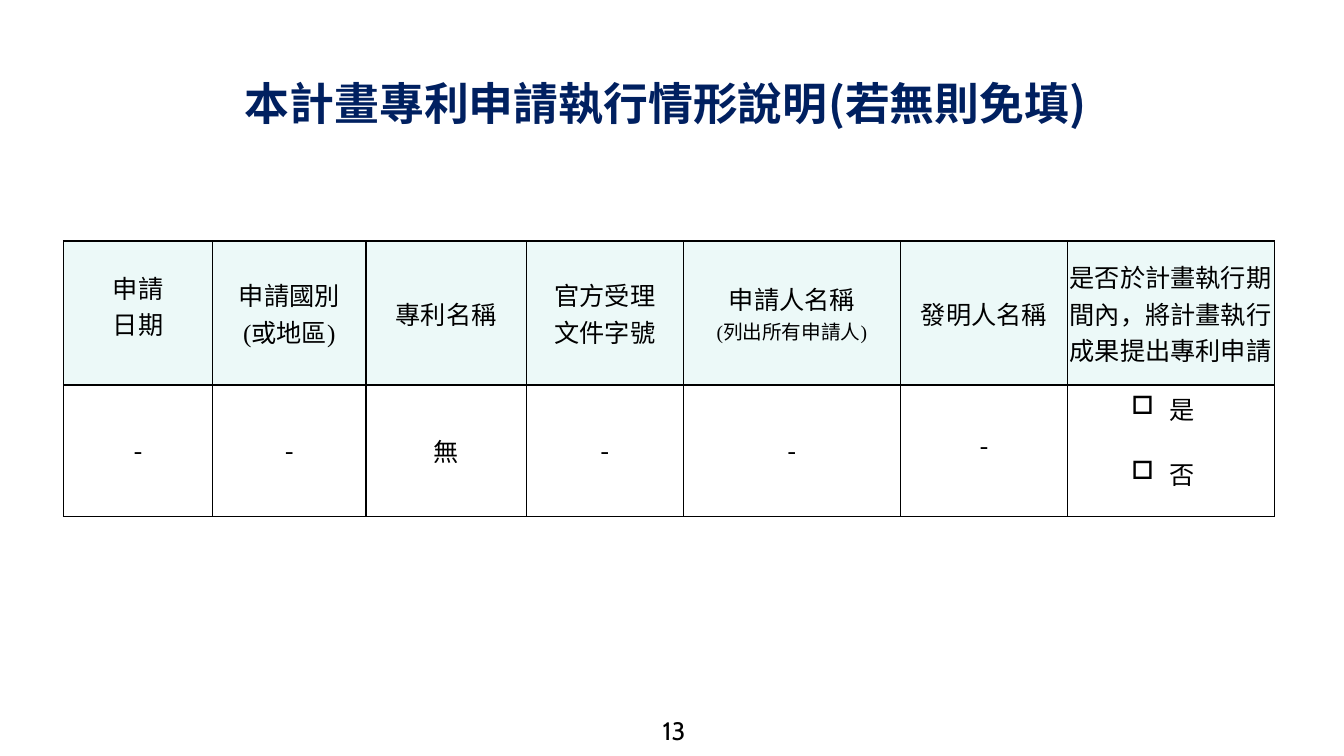
from lxml import etree
from pptx import Presentation
from pptx.dml.color import RGBColor
from pptx.enum.text import MSO_ANCHOR as Anchor, PP_ALIGN as Align
from pptx.oxml.ns import qn
from pptx.util import Inches, Pt

BLACK = RGBColor(0x00, 0x00, 0x00)
NAVY = RGBColor(0x00, 0x20, 0x60)
MINT = RGBColor(0xEC, 0xF9, 0xF8)

HEADERS = [
    ["申請", "日期"],
    ["申請國別", "(或地區)"],
    ["專利名稱"],
    ["官方受理", "文件字號"],
    ["申請人名稱", "(列出所有申請人)"],
    ["發明人名稱"],
    ["是否於計畫執行期間內，將計畫執行成果提出專利申請"],
]
ENTRIES = [["-"], ["-"], ["無"], ["-"], ["-"], ["-"], ["是", "否"]]
COLUMN_WIDTHS = [1.48, 1.52, 1.59, 1.56, 2.15, 1.66, 2.05]
ROW_HEIGHTS = [1.43, 1.3]


def style_font(paragraph, name, size, color, bold=False):
    font = paragraph.font
    font.name, font.size, font.bold = name, Pt(size), bold
    font.color.rgb = color


def add_borders(cell):
    properties = cell._tc.get_or_add_tcPr()
    for position, side in enumerate(["lnL", "lnR", "lnT", "lnB"]):
        line = etree.Element(qn(f"a:{side}"), w=str(Pt(1)))
        fill = etree.SubElement(line, qn("a:solidFill"))
        etree.SubElement(fill, qn("a:srgbClr"), val=str(BLACK))
        properties.insert(position, line)


presentation = Presentation()
presentation.slide_width = Inches(13.33)
presentation.slide_height = Inches(7.5)
slide = presentation.slides.add_slide(presentation.slide_layouts[6])

page_number = slide.shapes.add_textbox(Inches(6.45), Inches(7.05), Inches(0.47), Inches(0.4))
paragraph = page_number.text_frame.paragraphs[0]
paragraph.text = "13"
paragraph.alignment = Align.CENTER
style_font(paragraph, "Cabin", 18, BLACK)

title = slide.shapes.add_textbox(Inches(2.33), Inches(0.7), Inches(8.6), Inches(0.64))
title.text_frame.word_wrap = True
paragraph = title.text_frame.paragraphs[0]
paragraph.text = "本計畫專利申請執行情形說明(若無則免填)"
style_font(paragraph, "Noto Sans CJK SC", 32, NAVY, bold=True)

table = slide.shapes.add_table(
    2, 7, Inches(0.63), Inches(2.39), Inches(sum(COLUMN_WIDTHS)), Inches(sum(ROW_HEIGHTS))
).table
for column, width in zip(table.columns, COLUMN_WIDTHS):
    column.width = Inches(width)
for row, height in zip(table.rows, ROW_HEIGHTS):
    row.height = Inches(height)

for row_index, contents in enumerate([HEADERS, ENTRIES]):
    is_header = row_index == 0
    for column_index, lines in enumerate(contents):
        cell = table.cell(row_index, column_index)
        cell.margin_left = cell.margin_right = Inches(0.02)
        cell.margin_top = cell.margin_bottom = 0
        cell.vertical_anchor = Anchor.MIDDLE
        if is_header:
            cell.fill.solid()
            cell.fill.fore_color.rgb = MINT
        else:
            cell.fill.background()
        add_borders(cell)
        cell.text = "\n".join(lines)
        for paragraph in cell.text_frame.paragraphs:
            paragraph.alignment = Align.CENTER
            if not is_header and column_index == 6:
                properties = paragraph._p.get_or_add_pPr()
                properties.set("marL", "0")
                properties.set("indent", str(Inches(-0.38)))
                etree.SubElement(properties, qn("a:buChar"), char="□")
                tabs = etree.SubElement(properties, qn("a:tabLst"))
                etree.SubElement(tabs, qn("a:tab"), pos=str(Inches(0.25)), algn="l")
            size = 14 if paragraph.text == "(列出所有申請人)" else 18
            style_font(paragraph, "Times New Roman", size, BLACK)

date_header = table.cell(0, 0)
date_header.vertical_anchor = Anchor.TOP
date_header.margin_top = Inches(0.28)
table.cell(0, 6).text_frame.paragraphs[0].alignment = Align.LEFT
table.cell(1, 5).text_frame.paragraphs[0].line_spacing = Pt(14)
answer = table.cell(1, 6)
answer.margin_bottom = Inches(0.19)
answer.text_frame.paragraphs[1].space_before = Pt(20)

presentation.save("out.pptx")
